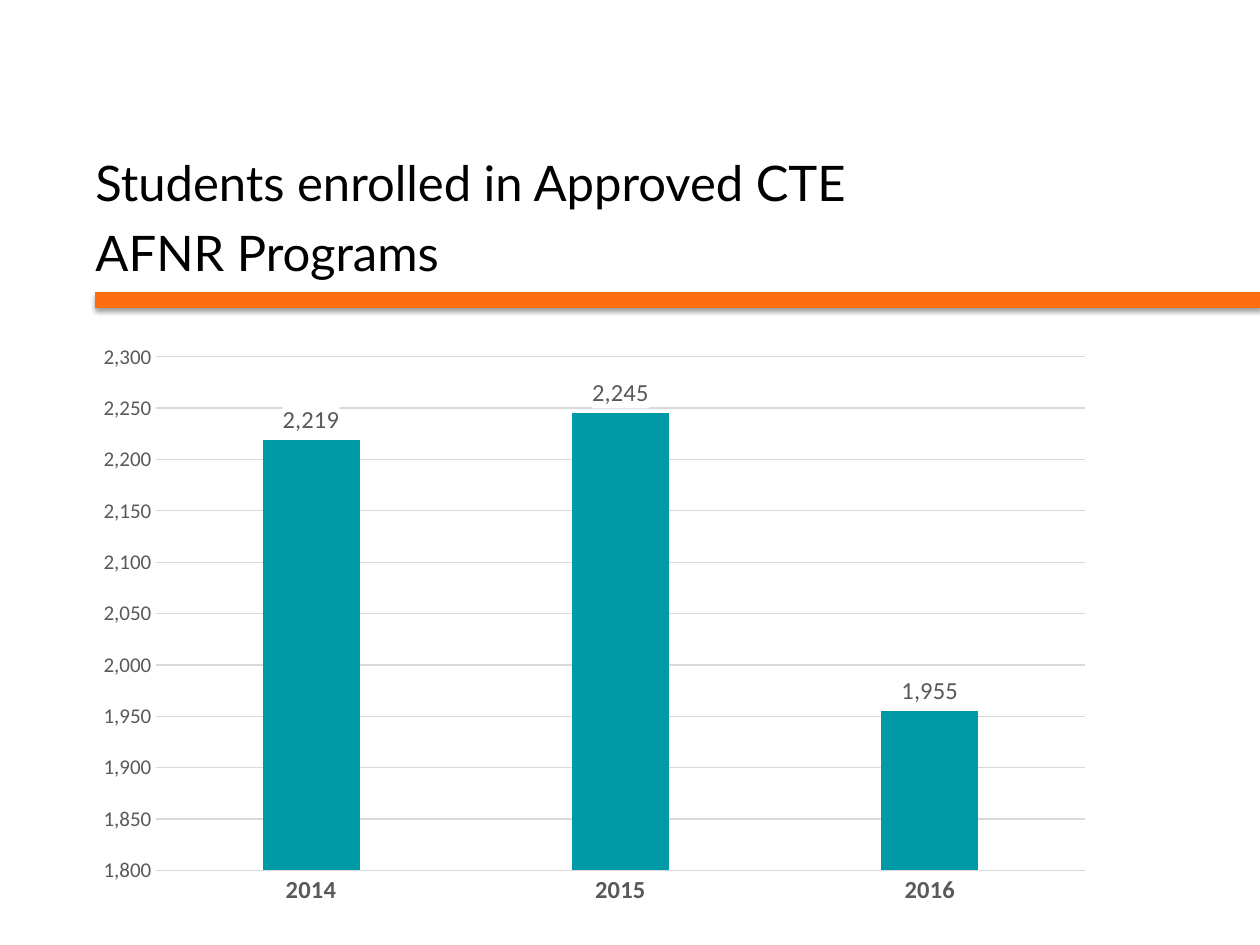
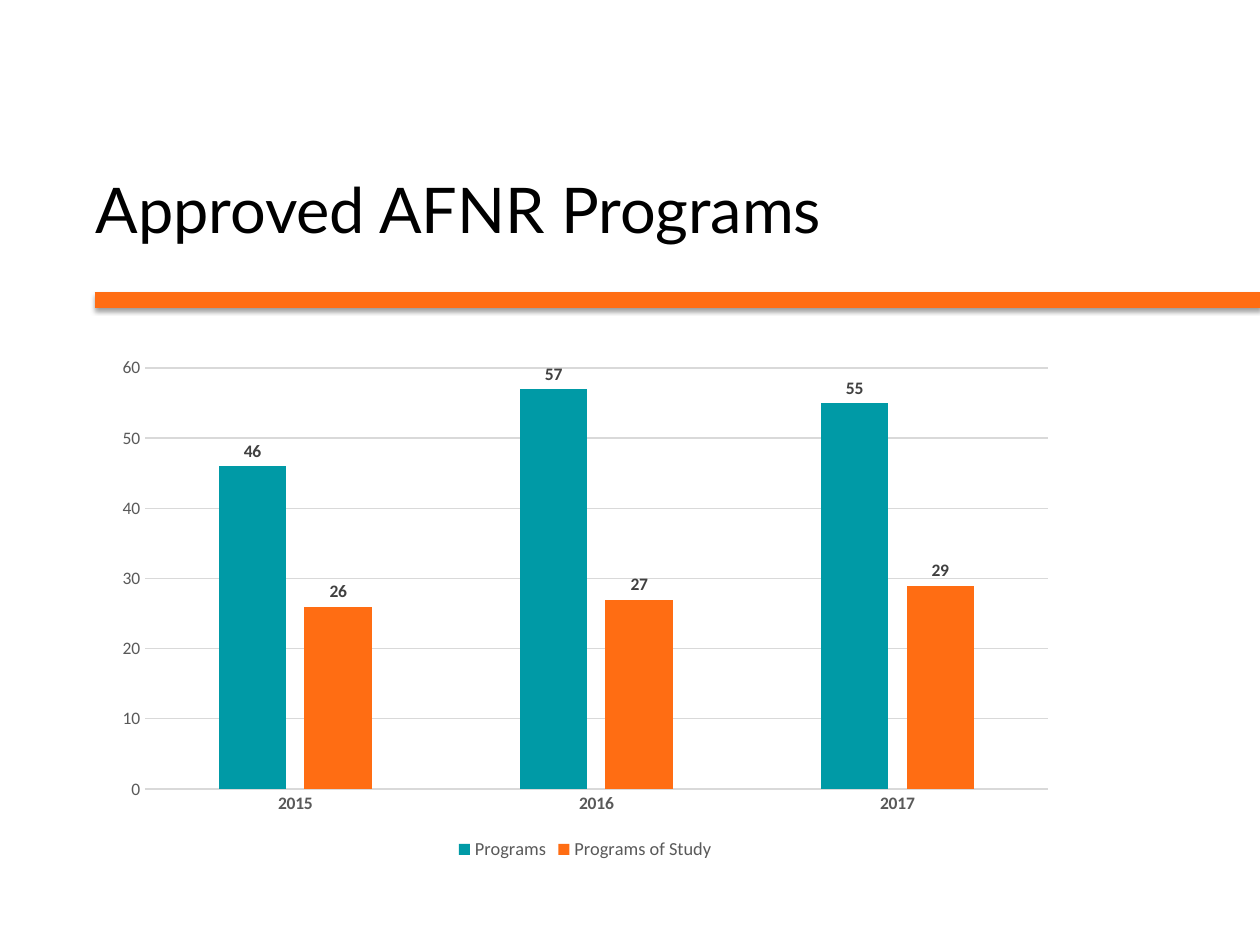
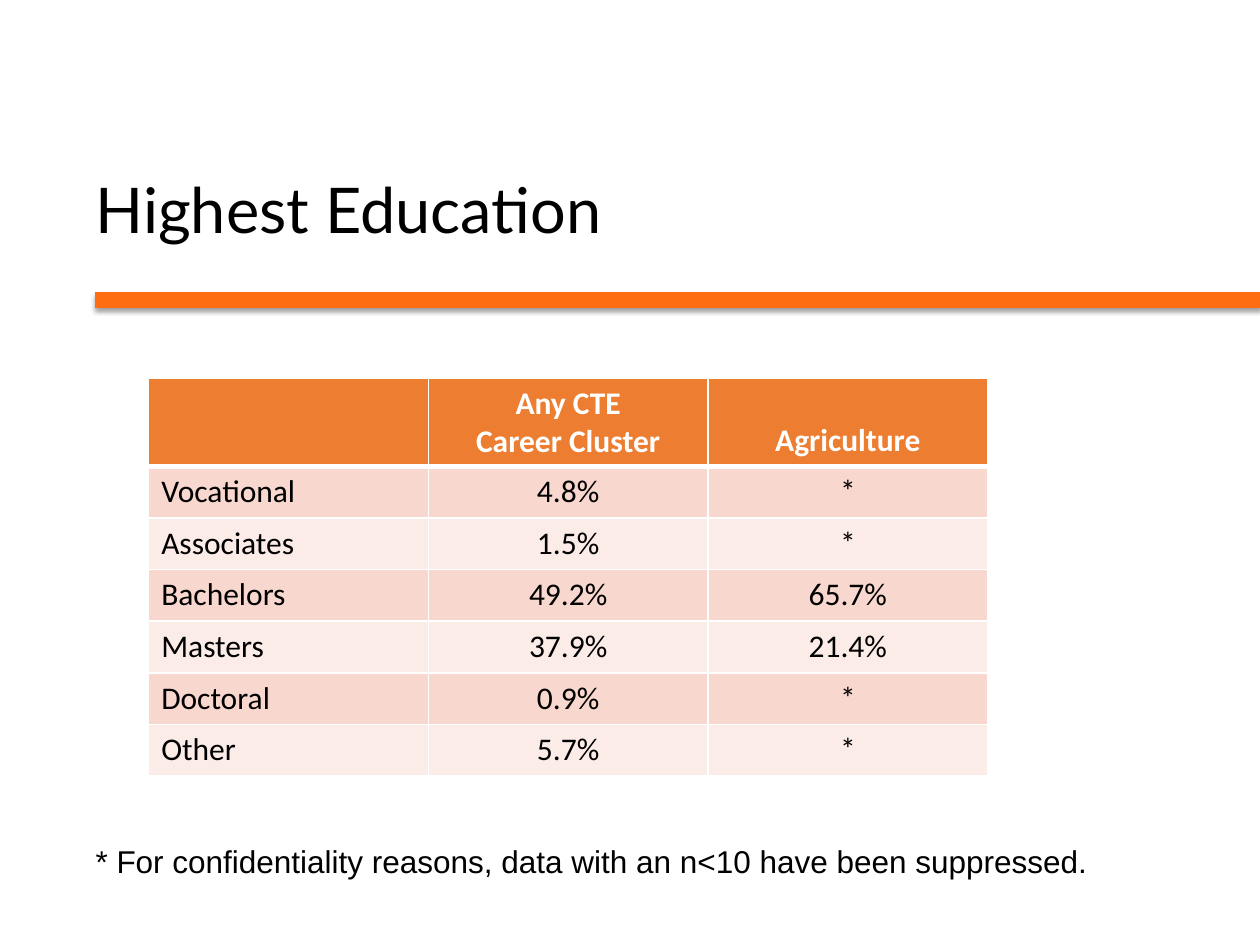
from lxml.etree import SubElement
from pptx import Presentation
from pptx.chart.data import CategoryChartData
from pptx.dml.color import RGBColor
from pptx.enum.chart import XL_CHART_TYPE, XL_LABEL_POSITION, XL_LEGEND_POSITION, XL_TICK_MARK
from pptx.enum.shapes import MSO_CONNECTOR
from pptx.enum.text import MSO_ANCHOR, PP_ALIGN
from pptx.oxml import parse_xml
from pptx.oxml.ns import nsdecls, qn
from pptx.util import Inches, Pt

ORANGE, TEAL, BLACK, WHITE = "FF6D13", "009AA6", "000000", "FFFFFF"
GREY, DARK_GREY, GRID = "595959", "404040", "D9D9D9"
HEADER_FILL, BAND_FILLS = "ED7D31", ("F8D7CE", "FCECE8")

ENROLLMENT = {
    "title": "Students enrolled in Approved CTE AFNR Programs",
    "title_size": 28,
    "at": (0.66, 2.64, 8.11, 4.64),
    "years": ("2014", "2015", "2016"),
    "series": [("Series 1", (2219, 2245, 1955), TEAL)],
    "scale": (1800, 2300, 50),
    "format": "#,##0",
    "year_size": 14,
    "value_size": 12,
    "label": (14, GREY, False),
    "label_fill": WHITE,
    "legend": False,
}
PROGRAMS = {
    "title": "Approved AFNR Programs",
    "title_size": 36,
    "at": (0.82, 2.76, 7.65, 4.11),
    "years": ("2015", "2016", "2017"),
    "series": [
        ("Programs", (46, 57, 55), TEAL),
        ("Programs of Study", (26, 27, 29), ORANGE),
    ],
    "scale": (0, 60, 10),
    "format": "General",
    "year_size": 10,
    "value_size": 10,
    "label": (10, DARK_GREY, True),
    "label_fill": None,
    "legend": True,
}
EDUCATION_HEADER = ([], ["Any CTE", "Career Cluster"], ["Agriculture"])
EDUCATION_ROWS = [
    ("Vocational", "4.8%", "*"),
    ("Associates", "1.5%", "*"),
    ("Bachelors", "49.2%", "65.7%"),
    ("Masters", "37.9%", "21.4%"),
    ("Doctoral", "0.9%", "*"),
    ("Other", "5.7%", "*"),
]
FOOTNOTE = "* For confidentiality reasons, data with an n<10 have been suppressed."


def color(value):
    return RGBColor.from_string(value)


def style_font(font, size, value, name="Calibri", bold=False):
    font.size = Pt(size)
    font.name = name
    font.bold = bold
    font.color.rgb = color(value)


def add_text(slide, at, text, size, name):
    frame = slide.shapes.add_textbox(*map(Inches, at)).text_frame
    frame.word_wrap = True
    run = frame.paragraphs[0].add_run()
    run.text = text
    style_font(run.font, size, BLACK, name)
    return frame


def add_titled_slide(deck, title, size):
    slide = deck.slides.add_slide(deck.slide_layouts[6])
    rule = slide.shapes.add_connector(
        MSO_CONNECTOR.STRAIGHT, Inches(0.75), Inches(2.38), Inches(10), Inches(2.38))
    rule.line.width = Pt(9)
    rule.line.color.rgb = color(ORANGE)
    rule._element.spPr.append(parse_xml(
        f'<a:effectLst {nsdecls("a")}><a:outerShdw blurRad="{Pt(3.1)}" dist="{Pt(1.6)}" '
        f'dir="5400000" rotWithShape="0"><a:srgbClr val="{BLACK}"><a:alpha val="38000"/>'
        '</a:srgbClr></a:outerShdw></a:effectLst>'))
    frame = add_text(slide, (0.66, 1.05, 6.73, 1.25), title, size, "Lato")
    frame.vertical_anchor = MSO_ANCHOR.MIDDLE
    frame.paragraphs[0].line_spacing = Pt(40)
    return slide


def style_axes(chart, content):
    years, values = chart.category_axis, chart.value_axis
    for axis in (years, values):
        axis.major_tick_mark = axis.minor_tick_mark = XL_TICK_MARK.NONE
    style_font(years.tick_labels.font, content["year_size"], GREY, bold=True)
    style_font(values.tick_labels.font, content["value_size"], GREY)
    values.minimum_scale, values.maximum_scale, values.major_unit = content["scale"]
    values.tick_labels.number_format = content["format"]
    values.tick_labels.number_format_is_linked = False
    values.format.line.fill.background()
    for line in (years.format.line, values.major_gridlines.format.line):
        line.color.rgb = color(GRID)
        line.width = Pt(0.75)


def style_labels(labels, content):
    size, value, bold = content["label"]
    style_font(labels.font, size, value, bold=bold)
    labels.show_value = True
    labels.number_format = content["format"]
    labels.number_format_is_linked = False
    labels.position = XL_LABEL_POSITION.OUTSIDE_END
    if content["label_fill"]:
        labels._element.find(qn("c:txPr")).addprevious(parse_xml(
            f'<c:spPr {nsdecls("c", "a")}><a:solidFill>'
            f'<a:srgbClr val="{content["label_fill"]}"/></a:solidFill></c:spPr>'))


def add_chart_slide(deck, content):
    slide = add_titled_slide(deck, content["title"], content["title_size"])
    data = CategoryChartData(number_format=content["format"])
    data.categories = content["years"]
    for name, values, _ in content["series"]:
        data.add_series(name, values)
    chart = slide.shapes.add_chart(
        XL_CHART_TYPE.COLUMN_CLUSTERED, *map(Inches, content["at"]), data).chart
    style_font(chart.font, 10, BLACK)
    chart.has_title = False
    chart.has_legend = content["legend"]
    if content["legend"]:
        chart.legend.position = XL_LEGEND_POSITION.BOTTOM
        chart.legend.include_in_layout = False
        style_font(chart.legend.font, 10.5, GREY)
    style_axes(chart, content)
    plot = chart.plots[0]
    plot.gap_width, plot.overlap = 219, -27
    plot.vary_by_categories = False
    for series, (_, _, fill) in zip(plot.series, content["series"]):
        series.format.fill.solid()
        series.format.fill.fore_color.rgb = color(fill)
        style_labels(series.data_labels, content)


def style_cell(cell, fill, top, bottom):
    properties = cell._tc.get_or_add_tcPr()
    for side, width in (("L", 1), ("R", 1), ("T", top), ("B", bottom)):
        border = SubElement(properties, qn(f"a:ln{side}"), w=str(Pt(width)))
        SubElement(SubElement(border, qn("a:solidFill")), qn("a:srgbClr"), val=WHITE)
    cell.fill.solid()
    cell.fill.fore_color.rgb = color(fill)


def fill_cell(cell, lines, value, bold, align):
    frame = cell.text_frame
    for index, line in enumerate(lines):
        paragraph = frame.add_paragraph() if index else frame.paragraphs[0]
        paragraph.alignment = align
        run = paragraph.add_run()
        run.text = line
        style_font(run.font, 18, value, bold=bold)


def add_education_slide(deck):
    slide = add_titled_slide(deck, "Highest Education", 36)
    rows = [EDUCATION_HEADER] + [[[text] for text in row] for row in EDUCATION_ROWS]
    table = slide.shapes.add_table(
        len(rows), 3, Inches(1.18), Inches(3), Inches(6.66), Inches(3.13)).table
    for column in table.columns:
        column.width = Inches(2.22)
    for r, row in enumerate(rows):
        header = r == 0
        table.rows[r].height = Inches(0.7 if header else 0.41)
        fill = HEADER_FILL if header else BAND_FILLS[(r - 1) % 2]
        for c, lines in enumerate(row):
            cell = table.cell(r, c)
            style_cell(cell, fill, 3 if r == 1 else 1, 3 if header else 1)
            if header:
                cell.vertical_anchor = MSO_ANCHOR.BOTTOM
            fill_cell(cell, lines, WHITE if header else BLACK, header,
                      PP_ALIGN.CENTER if c else PP_ALIGN.LEFT)
    add_text(slide, (0.66, 6.63, 8.25, 0.4), FOOTNOTE, 18, "Arial")


def main():
    deck = Presentation()
    deck.slide_width, deck.slide_height = Inches(10), Inches(7.5)
    for content in (ENROLLMENT, PROGRAMS):
        add_chart_slide(deck, content)
    add_education_slide(deck)
    deck.save("out.pptx")


if __name__ == "__main__":
    main()
